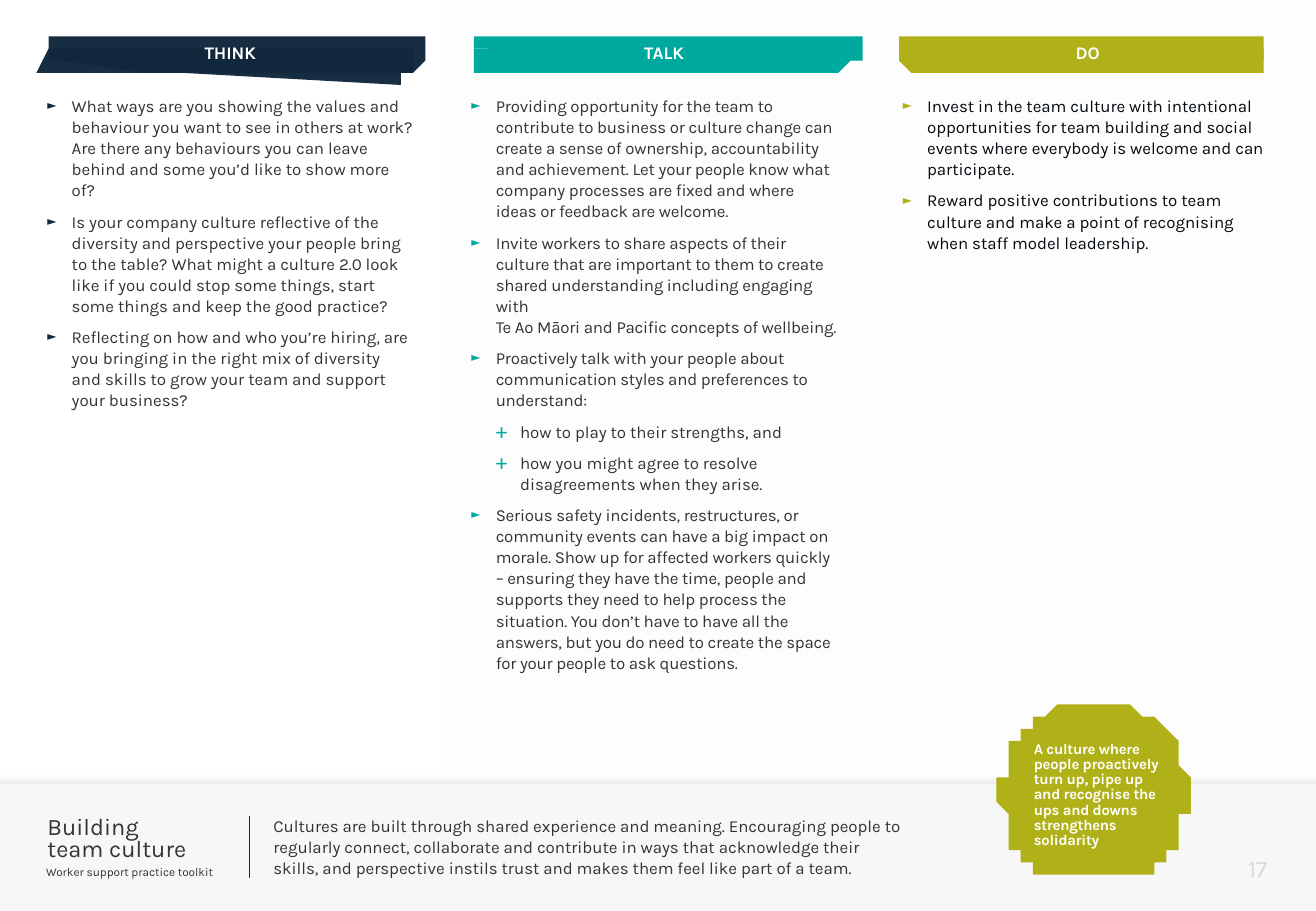
from dataclasses import dataclass
from typing import Any, NamedTuple

import lxml.etree
import pptx
import pptx.dml.color
import pptx.enum.shapes
import pptx.enum.text
import pptx.oxml.ns
import pptx.util

CELL = pptx.util.Inches(0.1)  # the slide is a grid of square cells
COLUMNS, ROWS = 108.3, 75
FONT = "Karla"
NAVY, TEAL, OLIVE = "10273C", "00A99D", "B0B018"
INK, BLACK, WHITE = "333436", "040A0F", "FFFFFF"
ALIGN = pptx.enum.text.PP_ALIGN
ANCHOR = pptx.enum.text.MSO_ANCHOR
Point = tuple[float, float]


class Box(NamedTuple):
    col: float
    row: float
    cols: float
    rows: float


class Bullet(NamedTuple):
    sign: str
    percent: int
    color: str


class Item(NamedTuple):
    text: str
    tracking: float = 0
    level: int = 0


class Style(NamedTuple):
    size: float = 10
    color: str = INK
    bold: bool = False
    leading: float | None = None
    after: float = 0
    align: Any = ALIGN.LEFT


@dataclass
class Topic:
    heading: str
    color: str
    label: Box
    area: Box
    ink: str
    strokes: list[list[Point]]
    items: list[Item]
    opacity: int = 100


TOPICS = [
    Topic("THINK", NAVY, Box(13.1, 2.7, 11.7, 3.3), Box(3.9, 7.8, 30.1, 53.6), INK, [
        [(35.2, 3.9), (34.9, 3.3), (34.4, 3.1), (33.8, 3), (27.1, 3), (11.9, 2.8), (4.9, 2.9),
         (4.5, 3.2), (4.3, 4.2), (4.4, 5.3), (5.3, 5.4), (12.3, 5.5), (33.6, 5.6), (34.2, 5.6),
         (34.9, 5.4), (34.9, 5.1), (35, 4.8)],
        [(33.6, 4), (32.9, 3.8), (22.5, 3.7), (10.5, 3.7), (3.8, 3.8), (3.5, 4.1), (3.3, 5.7),
         (3.4, 6.1), (3.8, 6.3), (10.5, 6.3), (14.7, 6.4), (32.9, 6.6), (33.2, 6.7), (33.4, 6.3),
         (33.5, 5.8), (33.8, 4.5), (33.7, 4.1)],
    ], [
        Item("What ways are you showing the values and behaviour you want to see in others at work? "
             "Are there any behaviours you can leave behind and some you’d like to show more of?"),
        Item("Is your company culture reflective of the diversity and perspective your people bring "
             "to the table? What might a culture 2.0 look like if you could stop some things, start "
             "some things and keep the good practice?"),
        Item("Reflecting on how and who you’re hiring, are you bringing in the right mix of "
             "diversity and skills to grow your team and support your business?"),
    ], 97),
    Topic("TALK", TEAL, Box(48.1, 2.7, 13.1, 3.3), Box(38.8, 7.8, 30.1, 51.8), INK, [
        [(39.5, 4.5), (47.1, 4.6), (69.3, 4.7), (70.7, 4.7), (71, 4.2), (70.9, 3.7), (70.6, 3.1),
         (70.1, 2.9), (69, 2.8), (59.1, 2.8), (58.9, 2.7), (47.4, 2.8), (39.4, 2.7), (39.1, 2.9),
         (38.8, 3.8), (39, 4.3)],
        [(70.2, 3.8), (69.4, 3.7), (62.2, 3.9), (58.7, 4), (39.9, 4.3), (39.4, 4.3), (39.1, 4.6),
         (38.8, 5.4), (38.9, 5.9), (39.5, 6.1), (39.9, 6), (46.5, 6), (50.7, 5.9), (68.8, 5.6),
         (69.3, 5.6), (70.1, 5.4), (70.3, 5.2), (70.6, 4.4), (70.6, 4.1)],
    ], [
        Item("Providing opportunity for the team to contribute to business or culture change can "
             "create a sense of ownership, accountability and achievement. Let your people know what "
             "company processes are fixed and where ideas or feedback are welcome.", -0.1),
        Item("Invite workers to share aspects of their culture that are important to them to create "
             "shared understanding including engaging with \n"
             "Te Ao Māori and Pacific concepts of wellbeing.", -0.1),
        Item("Proactively talk with your people about communication styles and preferences to "
             "understand:", -0.1),
        Item("how to play to their strengths, and", level=1),
        Item("how you might agree to resolve disagreements when they arise.", level=1),
        Item("Serious safety incidents, restructures, or community events can have a big impact on "
             "morale. Show up for affected workers quickly – ensuring they have the time, people and "
             "supports they need to help process the situation. You don’t have to have all the "
             "answers, but you do need to create the space for your people to ask questions.", -0.1),
    ]),
    Topic("DO", OLIVE, Box(82.4, 2.7, 14.2, 3.3), Box(74.3, 7.8, 30.1, 46.5), BLACK, [
        [(74.1, 4.7), (74.3, 5.3), (74.9, 5.5), (75.5, 5.5), (82, 5.4), (96.9, 5.2), (103.8, 4.9),
         (104.2, 4.6), (104.3, 3.7), (104.2, 2.7), (103.3, 2.6), (96.4, 2.7), (75.6, 3.1),
         (75, 3.1), (74.4, 3.3), (74.3, 3.8)],
        [(74.8, 6.3), (75.5, 6.5), (85.7, 6.3), (97.4, 6), (103.9, 5.8), (104.3, 5.5), (104.4, 4),
         (104.3, 3.7), (103.9, 3.5), (97.4, 3.6), (93.2, 3.6), (75.5, 3.8), (75.2, 3.8), (75, 4.1),
         (74.8, 4.7), (74.6, 5.8), (74.6, 6.1)],
    ], [
        Item("Invest in the team culture with intentional opportunities for team building and social "
             "events where everybody is welcome and can participate."),
        Item("Reward positive contributions to team culture and make a point of recognising when "
             "staff model leadership."),
    ]),
]
BLOB = [(90.2, 57.9), (87.7, 58.2), (85.3, 59.2), (83.3, 61.7), (82.4, 65.1), (83, 68.4),
        (84.7, 71.1), (88.2, 72.2), (92.8, 72.2), (95.1, 71.5), (96.2, 70.2), (97.3, 68.1),
        (97.6, 64.8), (96.9, 61.1), (94.4, 58.8), (91.9, 58.1)]


def cells(count: float) -> int:
    return round(count * CELL)


def rgb(color: str) -> pptx.dml.color.RGBColor:
    return pptx.dml.color.RGBColor.from_string(color)


def set_opacity(shape: Any, *percents: int) -> None:
    colors = shape.element.spPr.iter(pptx.oxml.ns.qn("a:srgbClr"))
    for color, percent in zip(list(colors), percents):
        lxml.etree.SubElement(color, pptx.oxml.ns.qn("a:alpha"), val=str(percent * 1000))


def finish(shape: Any, color: str, opacity: int = 100) -> None:
    shape.shadow.inherit = False
    shape.fill.solid()
    shape.fill.fore_color.rgb = rgb(color)
    shape.line.fill.background()
    if opacity < 100:
        set_opacity(shape, opacity)


def add_panel(slide: Any, box: Box, color: str, opacity: int = 100) -> Any:
    panel = slide.shapes.add_shape(pptx.enum.shapes.MSO_SHAPE.RECTANGLE, *map(cells, box))
    finish(panel, color, opacity)
    slide.shapes.title.element.addprevious(panel.element)  # behind the placeholders
    return panel


def add_outline(slide: Any, points: list[Point], color: str, opacity: int = 100) -> None:
    builder = slide.shapes.build_freeform(*points[0], scale=CELL)
    builder.add_line_segments(points[1:], close=True)
    finish(builder.convert_to_shape(), color, opacity)


def smooth(points: list[Point], steps: int = 8) -> list[Point]:
    """Closed Catmull-Rom curve through the points."""
    curve = []
    for i in range(len(points)):
        quad = [points[(i + k) % len(points)] for k in (-1, 0, 1, 2)]
        for t in (step / steps for step in range(steps)):
            curve.append(tuple(
                (2 * b + (c - a) * t + (2 * a - 5 * b + 4 * c - d) * t**2
                 + (3 * b - a - 3 * c + d) * t**3) / 2 for a, b, c, d in zip(*quad)))
    return curve


def set_bullet(paragraph: Any, bullet: Bullet | None, level: int) -> None:
    props = paragraph._p.get_or_add_pPr()
    hang = cells(2) if bullet else 0
    props.set("marL", str(hang * (level + 1)))
    props.set("indent", str(-hang))

    def add(parent: Any, tag: str, **values: str) -> Any:
        return lxml.etree.SubElement(parent, pptx.oxml.ns.qn(tag), **values)

    if bullet is None:
        add(props, "a:buNone")
        return
    add(add(props, "a:buClr"), "a:srgbClr", val=bullet.color)
    add(props, "a:buSzPct", val=str(bullet.percent * 1000))
    add(props, "a:buFont", typeface=FONT)
    add(props, "a:buChar", char=bullet.sign)


def write(holder: Any, box: Box, items: list[Item], style: Style, bullets: tuple[Bullet, ...] = (),
          insets: Point = (0, 0), anchor: Any = ANCHOR.TOP) -> None:
    holder.left, holder.top, holder.width, holder.height = map(cells, box)
    frame = holder.text_frame
    frame.word_wrap = True
    frame.auto_size = pptx.enum.text.MSO_AUTO_SIZE.NONE
    frame.vertical_anchor = anchor
    frame.margin_left = frame.margin_right = cells(insets[0])
    frame.margin_top = frame.margin_bottom = cells(insets[1])
    for i, item in enumerate(items):
        paragraph = frame.add_paragraph() if i else frame.paragraphs[0]
        paragraph.level = item.level
        paragraph.alignment = style.align
        paragraph.space_before = pptx.util.Pt(0)
        paragraph.space_after = pptx.util.Pt(style.after)
        paragraph.line_spacing = pptx.util.Pt(style.leading) if style.leading else 1.0
        set_bullet(paragraph, bullets[item.level] if bullets else None, item.level)
        for k, line in enumerate(item.text.split("\n")):
            if k:
                paragraph.add_line_break()
            run = paragraph.add_run()
            run.text = line
            run.font.name = FONT
            run.font.size = pptx.util.Pt(style.size)
            run.font.bold = style.bold
            run.font.color.rgb = rgb(style.color)
            if item.tracking:
                run.font._element.set("spc", str(round(item.tracking * 100)))


def add_text(slide: Any, box: Box, item: Item, style: Style, **options: Any) -> None:
    write(slide.shapes.add_textbox(*map(cells, box)), box, [item], style, **options)


def main() -> None:
    deck = pptx.Presentation()
    deck.slide_width, deck.slide_height = cells(COLUMNS), cells(ROWS)
    slide = deck.slides.add_slide(deck.slide_layouts.get_by_name("Comparison"))
    title, *lists, summary = slide.placeholders

    # Backdrop and footer band with its soft upper edge
    add_panel(slide, Box(36.8, 0, COLUMNS - 36.8, ROWS), "F2F2F2", 12)
    edge = add_panel(slide, Box(0, 63.1, COLUMNS, 1.4), WHITE)
    edge.fill.gradient()
    edge.fill.gradient_angle = 270
    for stop, color, position in zip(edge.fill.gradient_stops, (WHITE, "A6A6A6"), (0.37, 1)):
        stop.color.rgb, stop.position = rgb(color), position
    set_opacity(edge, 0, 23)
    add_panel(slide, Box(0, 64.6, COLUMNS, ROWS - 64.6), "F7F7F7")

    # Topic columns
    for topic, body in zip(TOPICS, lists):
        for stroke in topic.strokes:
            add_outline(slide, stroke, topic.color, topic.opacity)
        add_text(slide, topic.label, Item(topic.heading),
                 Style(10.5, WHITE, True, align=ALIGN.CENTER), insets=(0, 0.4), anchor=ANCHOR.MIDDLE)
        write(body, topic.area, topic.items, Style(color=topic.ink, leading=12.5, after=6),
              (Bullet("►", 70, topic.color), Bullet("+", 130, topic.color)))

    # Footer
    write(title, Box(3.9, 67.4, 17, 4.2), [Item("Building \nteam culture")], Style(14, leading=13))
    add_text(slide, Box(3.8, 70.7, 16.8, 2.2), Item("Worker support practice toolkit"), Style(7),
             insets=(0, 0.5))
    write(summary, Box(22.5, 67.1, 52.2, 5.8), [Item(
        "Cultures are built through shared experience and meaning. Encouraging people to regularly "
        "connect, collaborate and contribute in ways that acknowledge their skills, and perspective "
        "instils trust and makes them feel like part of a team.")], Style(leading=12.5, after=6))
    divider = slide.shapes.add_connector(
        pptx.enum.shapes.MSO_CONNECTOR.STRAIGHT, *map(cells, (20.5, 67.2, 20.5, 72.3)))
    divider.line.color.rgb = rgb(NAVY)
    divider.line.width = pptx.util.Pt(0.5)
    lxml.etree.SubElement(divider.element.spPr, pptx.oxml.ns.qn("a:effectLst"))
    add_text(slide, Box(99.3, 70, 5, 3), Item("17"), Style(14, "D9D9D9", align=ALIGN.RIGHT),
             anchor=ANCHOR.MIDDLE)

    # Key message
    add_outline(slide, smooth(BLOB), OLIVE)
    add_text(slide, Box(84.1, 60.6, 13.4, 9.8), Item(
        "A culture where people proactively turn up, pipe up and recognise the ups and downs "
        "strengthens solidarity", -0.1), Style(8.8, WHITE, True, 9), insets=(1, 0.5))

    deck.save("out.pptx")


if __name__ == "__main__":
    main()
